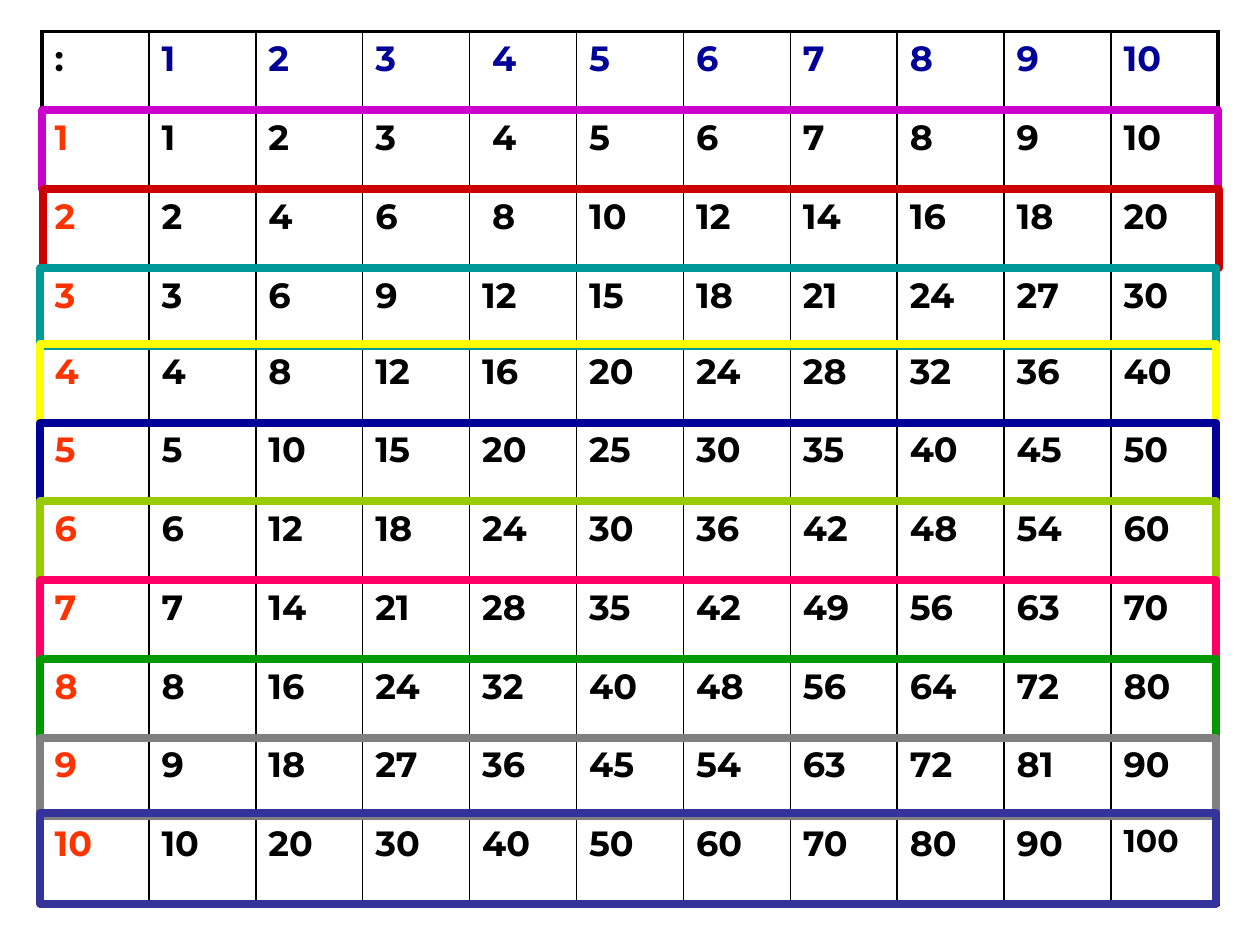
from lxml.etree import SubElement
from pptx import Presentation
from pptx.dml.color import RGBColor
from pptx.enum.shapes import MSO_SHAPE
from pptx.oxml.ns import qn
from pptx.util import Pt

SIZE = 11
LAST = SIZE - 1
ROW_HEIGHTS = [45] * 3 + [43.5] + [45] * 6 + [50.5]
FRAME_COLORS = ["CC00CC", "CC0000", "009999", "FFFF00", "000099",
                "99CC00", "FF0066", "009900", "808080", "333399"]


def rgb(value):
    """Return the colour of a hex string."""
    return RGBColor.from_string(value)


def set_borders(cell, widths):
    """Draw black left, right, top and bottom borders of the given widths."""
    tc_pr = cell._tc.get_or_add_tcPr()
    for i, (side, width) in enumerate(zip("LRTB", widths)):
        ln = SubElement(tc_pr, qn(f"a:ln{side}"), w=str(Pt(width)))
        fill = SubElement(ln, qn("a:solidFill"))
        SubElement(fill, qn("a:srgbClr"), val="000000")
        tc_pr.insert(i, ln)


def write_cell(cell, text, color, size):
    """Write one bold number in a cell without fill."""
    cell.fill.background()
    p = cell.text_frame.paragraphs[0]
    spacing = SubElement(p._p.get_or_add_pPr(), qn("a:spcBef"))
    SubElement(spacing, qn("a:spcPct"), val="20000")
    r = p.add_run()
    r.text = text
    r.font.color.rgb = rgb(color)
    for name, value in {"name": "Montserrat", "size": Pt(size), "bold": True}.items():
        setattr(r.font, name, value)


def cell_content(row, col):
    """Return the text and colour of a cell of the multiplication table."""
    if row == col == 0:
        return ":", "000000"
    text = str(max(row, 1) * max(col, 1))
    if col == 4 and row < 3:
        text = " " + text
    return text, "000099" if row == 0 else "FF3300" if col == 0 else "000000"


def add_number_table(slide, left, top, width):
    """Place the multiplication table with a thicker outer border."""
    shape = slide.shapes.add_table(SIZE, SIZE, Pt(left), Pt(top), Pt(width),
                                   Pt(sum(ROW_HEIGHTS)))
    table = shape.table
    for flag in ("first_row", "horz_banding"):
        setattr(table, flag, False)
    for column in table.columns:
        column.width = Pt(width / SIZE)
    for row, height in enumerate(ROW_HEIGHTS):
        table.rows[row].height = Pt(height)
        for col in range(SIZE):
            cell = table.cell(row, col)
            size = 18 if row == col == LAST else 20
            write_cell(cell, *cell_content(row, col), size)
            outer = (col == 0, col == LAST, row == 0, row == LAST)
            set_borders(cell, [2.25 if edge else 1 for edge in outer])


def add_row_frame(slide, left, top, width, height, color):
    """Outline one row of the table."""
    sp = slide.shapes.add_shape(MSO_SHAPE.RECTANGLE, Pt(left), Pt(top),
                                Pt(width), Pt(height))
    sp.shadow.inherit = False
    sp.fill.background()
    sp.line.color.rgb = rgb(color)
    sp.line.width = Pt(4.5)


def add_row_frames(slide, left, top, width):
    """Outline every row below the header in its own colour."""
    offsets = {1: 1, 2: 1.5}
    for row, color in enumerate(FRAME_COLORS, 1):
        y = top + sum(ROW_HEIGHTS[:row])
        y, height = (y - 2, 52) if row == LAST else (y, 45)
        add_row_frame(slide, left + offsets.get(row, 0), y, width, height, color)


def main():
    """Build the slide and save it."""
    prs = Presentation()
    prs.slide_width, prs.slide_height = Pt(720), Pt(540)
    slide = prs.slides.add_slide(prs.slide_layouts[6])
    add_number_table(slide, 24, 18, 672)
    add_row_frames(slide, 23, 18, 672)
    prs.save("out.pptx")


if __name__ == "__main__":
    main()
